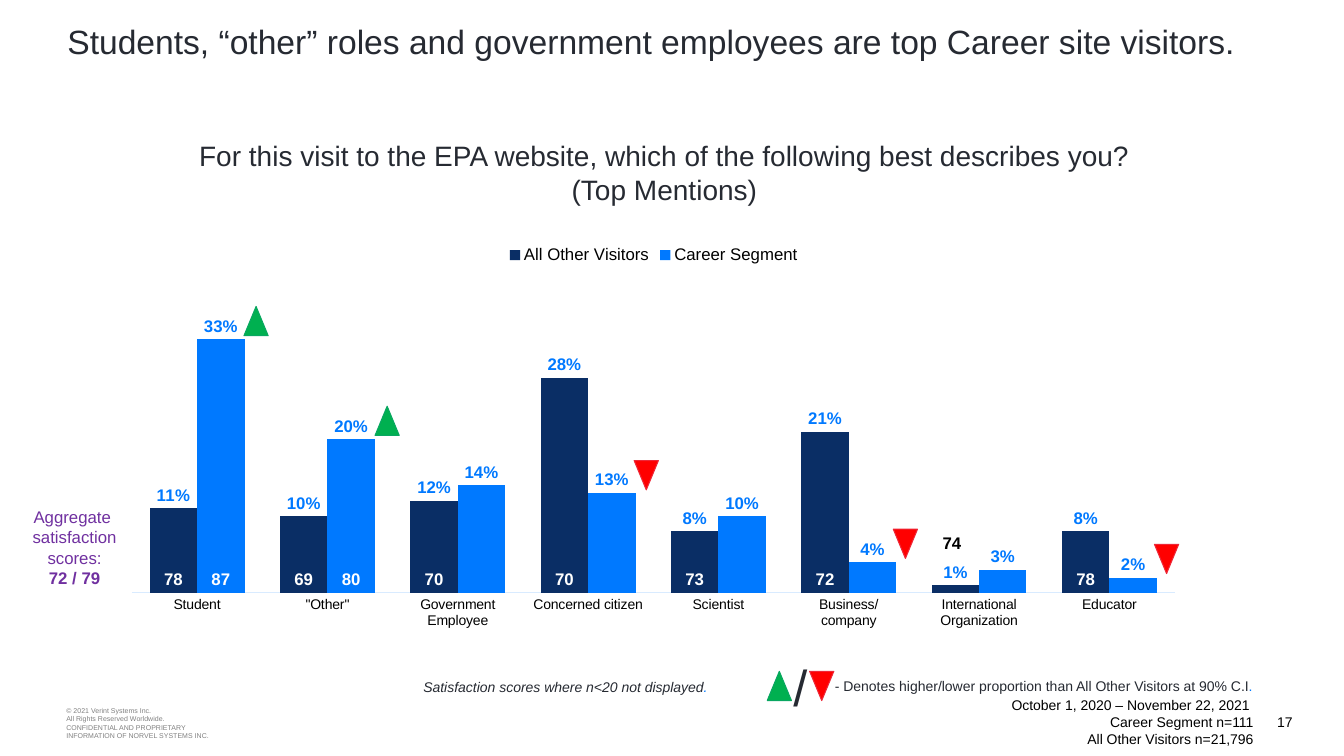
from copy import deepcopy

from lxml import etree
from pptx import Presentation
from pptx import util as u
from pptx.chart.data import CategoryChartData
from pptx.dml.color import RGBColor
from pptx.enum import chart as ch, shapes, text
from pptx.oxml.ns import qn

FONT = "Arial"
COLORS = {
    "ink": "262A32", "black": "000000", "grey": "808080", "white": "FFFFFF",
    "navy": "0A2E65", "blue": "0079FF", "pale": "D9EBFF", "purple": "7030A0",
    "green": "00B050", "green_line": "09A761", "red": "FF0000", "red_line": "EE2737",
}
LEFT, CENTER, RIGHT = text.PP_ALIGN.LEFT, text.PP_ALIGN.CENTER, text.PP_ALIGN.RIGHT
TOP, MIDDLE = text.MSO_ANCHOR.TOP, text.MSO_ANCHOR.MIDDLE

CATEGORIES = ["Student", '"Other"', "Government Employee", "Concerned citizen", "Scientist",
              "Business/\ncompany", "International Organization", "Educator"]
SHARES = {
    "All Other Visitors": ("navy", [0.11, 0.1, 0.12, 0.28, 0.08, 0.21, 0.01, 0.08]),
    "Career Segment": ("blue", [0.33, 0.2, 0.14, 0.13, 0.1, 0.04, 0.03, 0.02]),
}
SCORES = {
    "Series 3": [78, 69, 70, 70, 73, 72, 74, 78],
    "Series 4": [87, 80] + [None] * 6,
}
MARKERS = [(2.42, 3.04, True), (3.72, 4.03, True), (6.29, 4.57, False),
           (8.86, 5.25, False), (11.45, 5.4, False)]


def rgb(name):
    return RGBColor.from_string(COLORS[name])


def set_font(font, size, color, bold=False, italic=False):
    font.name, font.size, font.color.rgb = FONT, u.Pt(size), rgb(color)
    font.bold, font.italic = bold, italic


def add_text(parent, box, lines, size, color="ink", align=LEFT, anchor=TOP, italic=False,
             wrap=True):
    tf = parent.add_textbox(*map(u.Inches, box)).text_frame
    tf.word_wrap, tf.vertical_anchor = wrap, anchor
    for i, line in enumerate(lines):
        p = tf.add_paragraph() if i else tf.paragraphs[0]
        p.text, p.alignment = line, align
        for r in p.runs:
            set_font(r.font, size, color, italic=italic)
    return tf


def add_blue_stop(tf, italic=False):
    r = tf.paragraphs[0].add_run()
    r.text = "."
    set_font(r.font, 10, "blue", italic=italic)


def add_marker(parent, left, top, higher):
    """Green triangle pointing up for higher, red pointing down for lower."""
    hue = "green" if higher else "red"
    sp = parent.add_shape(shapes.MSO_SHAPE.ISOSCELES_TRIANGLE, u.Inches(left), u.Inches(top),
                          u.Inches(0.24), u.Inches(0.29))
    sp.rotation = 0 if higher else 180
    sp.shadow.inherit = False
    sp.fill.solid()
    sp.fill.fore_color.rgb = rgb(hue)
    sp.line.color.rgb = rgb(hue + "_line")
    sp.line.width = u.Pt(0.75)


def add_labels(series, color, number_format, position):
    labels = series.data_labels
    labels.show_value = True
    labels.number_format, labels.number_format_is_linked = number_format, False
    labels.position = position
    set_font(labels.font, 12, color, bold=True)


def sub(parent, tag, **attrs):
    return etree.SubElement(parent, qn("c:" + tag), attrs)


def hide_label(series, index):
    item = etree.Element(qn("c:dLbl"))
    sub(item, "idx", val=str(index))
    sub(item, "delete", val="1")
    series.data_labels._element.insert(0, item)


def hide_legend_entries(legend, indexes):
    position = legend._element.find(qn("c:legendPos"))
    for index in reversed(indexes):
        entry = etree.Element(qn("c:legendEntry"))
        sub(entry, "idx", val=str(index))
        sub(entry, "delete", val="1")
        position.addnext(entry)


def set_plot_layout(plot_area, x, y, w, h):
    for old in plot_area.findall(qn("c:layout")):
        plot_area.remove(old)
    layout = etree.Element(qn("c:layout"))
    manual = sub(layout, "manualLayout")
    sub(manual, "layoutTarget", val="inner")
    for tag in ("xMode", "yMode"):
        sub(manual, tag, val="edge")
    for tag, value in zip("xywh", (x, y, w, h)):
        sub(manual, tag, val=str(value))
    plot_area.insert(0, layout)


def split_to_second_axis(plot_area, first_count):
    """Move the series after the first ones to hidden secondary axes."""
    bars = plot_area.find(qn("c:barChart"))
    second = deepcopy(bars)
    for s in bars.findall(qn("c:ser"))[first_count:]:
        bars.remove(s)
    for s in second.findall(qn("c:ser"))[:first_count]:
        second.remove(s)
    bars.addnext(second)

    cat, val = plot_area.find(qn("c:catAx")), plot_area.find(qn("c:valAx"))
    cat2, val2 = deepcopy(cat), deepcopy(val)
    for axis, own, other in ((cat2, "5001", "5002"), (val2, "5002", "5001")):
        axis.find(qn("c:axId")).set("val", own)
        axis.find(qn("c:crossAx")).set("val", other)
    for ref, own in zip(second.findall(qn("c:axId")), ("5001", "5002")):
        ref.set("val", own)
    cat2.find(qn("c:delete")).set("val", "1")
    val2.find(qn("c:crosses")).set("val", "max")
    scaling = val2.find(qn("c:scaling"))
    scaling.remove(scaling.find(qn("c:max")))
    val.addnext(val2)
    val2.addnext(cat2)


def add_visitor_chart(parent, box):
    data = CategoryChartData()
    data.categories = CATEGORIES
    for name, (_, values) in SHARES.items():
        data.add_series(name, values, "0%")
    for name, values in SCORES.items():
        data.add_series(name, values, "0")
    chart = parent.add_chart(ch.XL_CHART_TYPE.COLUMN_CLUSTERED, *map(u.Inches, box), data).chart
    chart.has_title = False
    set_font(chart.font, 10, "blue")

    plot = chart.plots[0]
    plot.gap_width, plot.overlap, plot.vary_by_categories = 75, 0, False
    for s in plot.series:
        if s.name in SHARES:
            s.format.fill.solid()
            s.format.fill.fore_color.rgb = rgb(SHARES[s.name][0])
            add_labels(s, "blue", "0%", ch.XL_LABEL_POSITION.OUTSIDE_END)
        else:
            s.format.fill.background()
            add_labels(s, "white", "0", ch.XL_LABEL_POSITION.INSIDE_BASE)
    hide_label(plot.series[2], 6)

    cat, val = chart.category_axis, chart.value_axis
    cat.major_tick_mark = ch.XL_TICK_MARK.NONE
    set_font(cat.tick_labels.font, 10, "black")
    cat.format.line.color.rgb = rgb("pale")
    cat.format.line.width = u.Pt(0.75)
    val.minimum_scale, val.maximum_scale = 0, 0.4
    val.has_major_gridlines = False
    val.tick_label_position = ch.XL_TICK_LABEL_POSITION.NONE
    val.format.line.fill.background()

    chart.has_legend = True
    chart.legend.position = ch.XL_LEGEND_POSITION.TOP
    chart.legend.include_in_layout = False
    set_font(chart.legend.font, 12, "black")
    hide_legend_entries(chart.legend, [2, 3])

    plot_area = chart._chartSpace.chart.plotArea
    split_to_second_axis(plot_area, len(SHARES))
    set_plot_layout(plot_area, 0.014, 0.127, 0.971, 0.768)


def add_key(parent):
    """Legend for the higher and lower markers."""
    key = parent.add_group_shape().shapes
    tf = add_text(key, (8.15, 6.67, 4.48, 0.27),
                  ["- Denotes higher/lower proportion than All Other Visitors at 90% C.I"],
                  10, anchor=MIDDLE)
    tf.margin_left = u.Inches(0.13)
    add_blue_stop(tf)
    add_marker(key, 7.61, 6.66, True)
    add_marker(key, 8.03, 6.66, False)
    add_text(key, (7.77, 6.46, 0.34, 0.71), ["/"], 36, wrap=False)


def main():
    prs = Presentation()
    prs.slide_width, prs.slide_height = u.Inches(13.33), u.Inches(7.5)
    s = prs.slides.add_slide(prs.slide_layouts[6]).shapes

    add_text(s, (0.56, 6.94, 2.4, 0.47),
             ["© 2021 Verint Systems Inc.", "All Rights Reserved Worldwide.",
              "CONFIDENTIAL AND PROPRIETARY", "INFORMATION OF NORVEL SYSTEMS INC."],
             5, "grey", anchor=MIDDLE)
    add_text(s, (11.81, 6.93, 1.11, 0.47), ["17"], 10, "black", RIGHT, MIDDLE)
    add_text(s, (0.57, 0.16, 12.2, 0.77),
             ["Students, “other” roles and government employees are top Career site visitors."], 24)
    add_text(s, (6.53, 6.93, 6, 0.47),
             ["October 1, 2020 – November 22, 2021 ", "Career Segment n=111",
              "All Other Visitors n=21,796"], 10, "black", RIGHT, MIDDLE)
    add_visitor_chart(s, (1.16, 2.33, 10.65, 3.97))
    add_text(s, (1.75, 1.33, 9.68, 0.77),
             ["For this visit to the EPA website, which of the following best describes you? "
              "(Top Mentions)"], 20, align=CENTER)
    add_key(s)
    for marker in MARKERS:
        add_marker(s, *marker)
    note = add_text(s, (4.1, 6.69, 3.49, 0.25), ["Satisfaction scores where n<20 not displayed"],
                    10, anchor=MIDDLE, italic=True)
    note.margin_top = note.margin_bottom = 0
    add_blue_stop(note, italic=True)
    score = add_text(s, (9.25, 5.24, 0.4, 0.3), ["74"], 12, "black")
    score.paragraphs[0].runs[0].font.bold = True
    totals = add_text(s, (0.14, 4.98, 1.2, 0.91),
                      ["Aggregate ", "satisfaction scores:", "72 / 79"], 12, "purple", CENTER)
    totals.paragraphs[-1].runs[0].font.bold = True
    prs.save("out.pptx")


if __name__ == "__main__":
    main()
